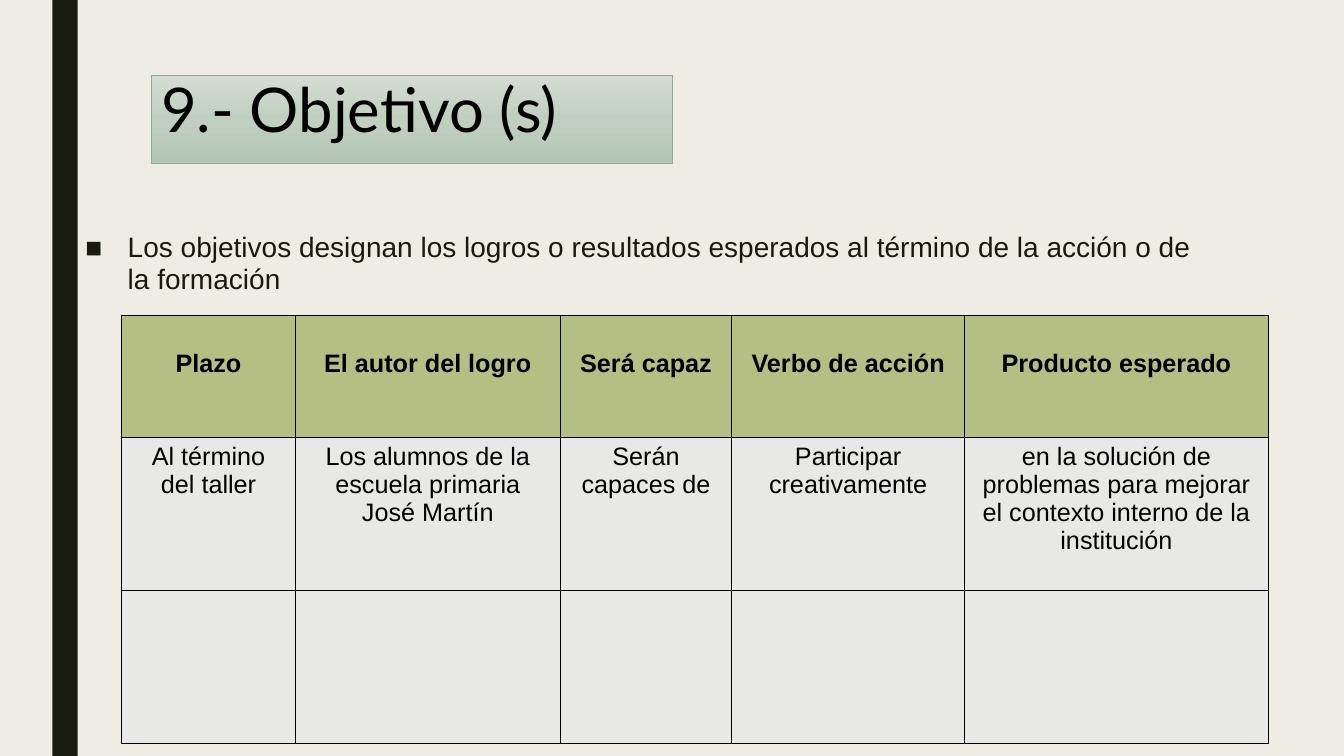
import copy

import lxml.etree
import pptx
import pptx.dml.color
import pptx.enum.shapes
import pptx.enum.text
import pptx.oxml
import pptx.oxml.ns
import pptx.util

Cm = pptx.util.Cm
Pt = pptx.util.Pt
qn = pptx.oxml.ns.qn

COLORS = {
    "background": "EFEDE3",
    "dark": "191B0E",
    "black": "000000",
    "title_line": "8DAB8E",
    "header": "B6BF83",
    "body": "E8E8E7",
}
TITLE_GRADIENT = ["D3DDD3", "C0CFC0", "B4C7B5"]
COLUMN_WIDTHS = [4.37, 6.68, 4.32, 5.87, 7.65]
ROW_HEIGHTS = [3.07, 3.86, 3.86]
ROWS = [
    ["Plazo", "El autor del logro", "Será capaz", "Verbo de acción", "Producto esperado"],
    [
        "Al término del taller",
        "Los alumnos de la escuela primaria José Martín",
        "Serán capaces de",
        "Participar creativamente",
        "en la solución de problemas para mejorar el contexto interno de la institución",
    ],
    [""] * 5,
]


def rgb(value):
    return pptx.dml.color.RGBColor.from_string(value)


class SlideBuilder:
    def __init__(self, slide, font="Arial"):
        self.slide = slide
        self.font = font
        fill = slide.background.fill
        fill.solid()
        fill.fore_color.rgb = rgb(COLORS["background"])

    def text_run(self, p, text, size, color="black", bold=False, font=None):
        r = p.add_run()
        r.text = text
        r.font.size = Pt(size)
        r.font.name = font or self.font
        r.font.bold = bold
        r.font.color.rgb = rgb(COLORS[color])

    def rect(self, left, top, width, height):
        sp = self.slide.shapes.add_shape(
            pptx.enum.shapes.MSO_SHAPE.RECTANGLE, Cm(left), Cm(top), Cm(width), Cm(height))
        sp.shadow.inherit = False
        return sp

    def bar(self, left, top, width, height):
        sp = self.rect(left, top, width, height)
        sp.fill.solid()
        sp.fill.fore_color.rgb = rgb(COLORS["dark"])
        sp.line.fill.background()

    def title(self, left, top, width, height, text):
        sp = self.rect(left, top, width, height)
        sp.fill.gradient()
        sp.fill.gradient_angle = 270
        stops = sp._element.spPr.find(".//" + qn("a:gsLst"))
        middle = copy.deepcopy(stops[0])
        middle.set("pos", "50000")
        stops.insert(1, middle)
        for stop, color in zip(sp.fill.gradient_stops, TITLE_GRADIENT):
            stop.color.rgb = rgb(color)
        sp.line.color.rgb = rgb(COLORS["title_line"])
        sp.line.width = Pt(0.5)
        tf = sp.text_frame
        tf.word_wrap = True
        tf.vertical_anchor = pptx.enum.text.MSO_ANCHOR.TOP
        p = tf.paragraphs[0]
        p.alignment = pptx.enum.text.PP_ALIGN.LEFT
        p.line_spacing = 0.89
        self.text_run(p, text, 44, font="Lato")

    def bullet(self, left, top, width, height, text):
        sp = self.slide.shapes.add_textbox(Cm(left), Cm(top), Cm(width), Cm(height))
        tf = sp.text_frame
        tf.word_wrap = True
        p = tf.paragraphs[0]
        p.line_spacing = 0.94
        p.space_after = Pt(2)
        pPr = p._p.get_or_add_pPr()
        pPr.set("marL", str(Cm(1.07)))
        pPr.set("indent", str(Cm(-1.07)))
        lxml.etree.SubElement(pPr, qn("a:buFont"), typeface=self.font)
        lxml.etree.SubElement(pPr, qn("a:buChar"), char="■")
        self.text_run(p, text, 20, "dark")

    def borders(self, cell):
        tcPr = cell._tc.get_or_add_tcPr()
        for side in ("lnL", "lnR", "lnT", "lnB"):
            ln = lxml.etree.SubElement(tcPr, qn("a:" + side), w=str(Pt(1)))
            fill = lxml.etree.SubElement(ln, qn("a:solidFill"))
            lxml.etree.SubElement(fill, qn("a:srgbClr"), val=COLORS["black"])

    def table(self, left, top, widths, heights, rows):
        table = self.slide.shapes.add_table(
            len(rows), len(widths), Cm(left), Cm(top), Cm(sum(widths)), Cm(sum(heights))).table
        for column, width in zip(table.columns, widths):
            column.width = Cm(width)
        for i, (row, height, texts) in enumerate(zip(table.rows, heights, rows)):
            row.height = Cm(height)
            is_header = i == 0
            for cell, text in zip(row.cells, texts):
                self.borders(cell)
                cell.fill.solid()
                cell.fill.fore_color.rgb = rgb(COLORS["header" if is_header else "body"])
                if is_header:
                    cell.margin_top = Cm(0.85)
                if text:
                    p = cell.text_frame.paragraphs[0]
                    p.alignment = pptx.enum.text.PP_ALIGN.CENTER
                    self.text_run(p, text, 18, bold=is_header)


def main():
    prs = pptx.Presentation()
    prs.slide_width = Cm(33.87)
    prs.slide_height = Cm(19.05)
    s = SlideBuilder(prs.slides.add_slide(prs.slide_layouts[6]))
    s.bar(1.32, 0, 0.64, 19.05)
    s.title(3.81, 1.9, 13.13, 2.21, "9.- Objetivo (s)")
    s.bullet(1.9, 5.74, 28.88, 2.21,
             "Los objetivos designan los logros o resultados esperados "
             "al término de la acción o de la formación")
    s.table(3.07, 7.95, COLUMN_WIDTHS, ROW_HEIGHTS, ROWS)
    prs.save("out.pptx")


if __name__ == "__main__":
    main()
